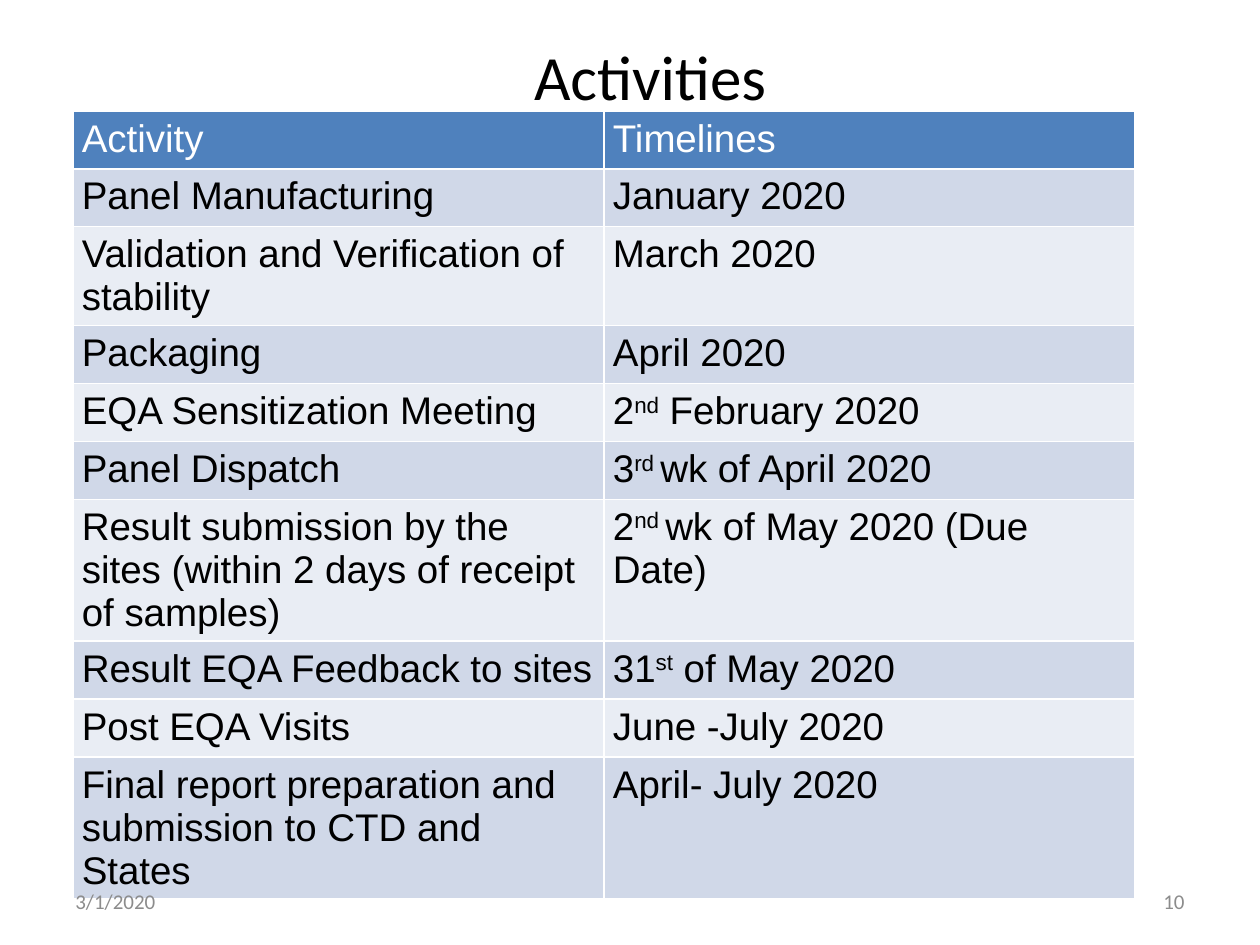
from pptx import Presentation
from pptx.dml.color import RGBColor
from pptx.enum.text import MSO_ANCHOR, PP_ALIGN
from pptx.util import Inches, Pt

MIDDLE = MSO_ANCHOR.MIDDLE
LEFT, CENTER, RIGHT = PP_ALIGN.LEFT, PP_ALIGN.CENTER, PP_ALIGN.RIGHT
TITLE_ONLY = 5

HEADER_FILL = "4F81BD"
BAND_FILLS = ("D0D8E8", "E9EDF4")
BLACK, WHITE, GREY = "000000", "FFFFFF", "8C8C8C"

ROW_HEIGHTS = {1: 0.46, 2: 0.78, 3: 1.12}
SCHEDULE = [
    (1, "Activity", ["Timelines"]),
    (1, "Panel Manufacturing", ["January 2020"]),
    (2, "Validation and Verification of stability", ["March 2020"]),
    (1, "Packaging", ["April 2020"]),
    (1, "EQA Sensitization Meeting", ["2", "nd", " February 2020"]),
    (1, "Panel Dispatch", ["3", "rd ", "wk of April 2020"]),
    (3, "Result submission by the sites (within 2 days of receipt of samples)",
     ["2", "nd ", "wk of May 2020 (Due Date)"]),
    (1, "Result EQA Feedback to sites", ["31", "st", " of May 2020"]),
    (1, "Post EQA Visits", ["June -July 2020"]),
    (3, "Final report preparation and submission to CTD and States",
     ["April- July 2020"]),
]


def rgb(color):
    """Turn a hex string into a colour."""
    return RGBColor.from_string(color)


def add_run(paragraph, text, size, font, color, superscript=False):
    """Append one formatted run to a paragraph."""
    run = paragraph.add_run()
    run.text = text
    run.font.size = Pt(size)
    run.font.name = font
    run.font.color.rgb = rgb(color)
    if superscript:
        run.font._element.set("baseline", "30000")


def place_title(slide, left, top, width, height):
    """Move the title placeholder into its box and fill it."""
    title = slide.shapes.title
    title.left, title.top = Inches(left), Inches(top)
    title.width, title.height = Inches(width), Inches(height)
    frame = title.text_frame
    frame.vertical_anchor = MIDDLE
    frame.margin_right = Inches(0.32)
    heading = frame.paragraphs[0]
    heading.alignment = CENTER
    add_run(heading, "Activities", 36, "Calibri", BLACK)


def fill_cell(cell, parts, fill, color):
    """Fill a cell with text whose every second part is raised."""
    cell.fill.solid()
    cell.fill.fore_color.rgb = rgb(fill)
    cell.margin_left = cell.margin_right = Inches(0.07)
    cell.margin_top = cell.margin_bottom = Inches(0.05)
    for index, part in enumerate(parts):
        add_run(cell.text_frame.paragraphs[0], part, 22, "Arial", color,
                superscript=index % 2 == 1)


def add_schedule(slide, left, top, width):
    """Add the table of activities and their timelines."""
    height = sum(ROW_HEIGHTS[lines] for lines, _, _ in SCHEDULE)
    schedule = slide.shapes.add_table(
        len(SCHEDULE), 2, Inches(left), Inches(top), Inches(width), Inches(height)
    ).table
    for column in schedule.columns:
        column.width = Inches(width / 2)
    for row, (lines, activity, timeline) in enumerate(SCHEDULE):
        schedule.rows[row].height = Inches(ROW_HEIGHTS[lines])
        fill = BAND_FILLS[(row - 1) % 2] if row else HEADER_FILL
        color = BLACK if row else WHITE
        fill_cell(schedule.cell(row, 0), [activity], fill, color)
        fill_cell(schedule.cell(row, 1), timeline, fill, color)


def add_footer(slide, text, alignment, left, top, width, height):
    """Add one small grey footer text."""
    footer = slide.shapes.add_textbox(
        Inches(left), Inches(top), Inches(width), Inches(height))
    frame = footer.text_frame
    frame.word_wrap = True
    frame.vertical_anchor = MIDDLE
    frame.paragraphs[0].alignment = alignment
    add_run(frame.paragraphs[0], text, 12, "Calibri", GREY)


def main():
    """Build and save the slide."""
    presentation = Presentation()
    presentation.slide_width = Inches(10)
    presentation.slide_height = Inches(7.5)
    slide = presentation.slides.add_slide(presentation.slide_layouts[TITLE_ONLY])
    add_schedule(slide, 0.58, 0.88, 8.43)
    add_footer(slide, "3/1/2020", LEFT, 0.5, 6.95, 2.33, 0.4)
    add_footer(slide, "10", RIGHT, 7.17, 6.95, 2.33, 0.4)
    place_title(slide, 1.58, 0.17, 7.38, 0.86)
    presentation.save("out.pptx")


if __name__ == "__main__":
    main()
